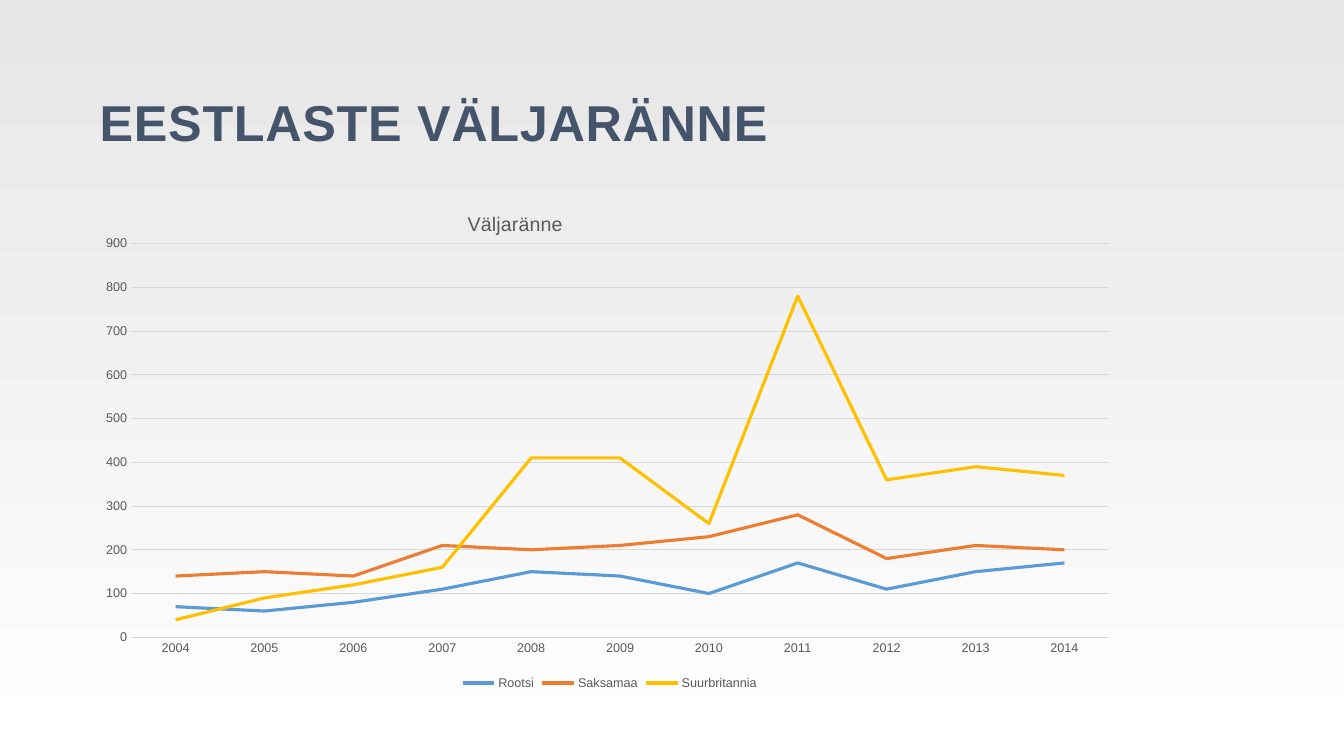
"""Builds a slide with a line chart of emigration from Estonia by destination."""
from dataclasses import dataclass

from lxml import etree
from pptx import Presentation
from pptx.chart.data import CategoryChartData
from pptx.dml.color import RGBColor
from pptx.enum.chart import XL_CHART_TYPE, XL_LEGEND_POSITION, XL_TICK_MARK
from pptx.enum.text import MSO_ANCHOR, PP_ALIGN
from pptx.oxml.ns import qn
from pptx.util import Pt

LINE_CHART = XL_CHART_TYPE.LINE
LEGEND_BOTTOM = XL_LEGEND_POSITION.BOTTOM
NO_TICK = XL_TICK_MARK.NONE
ANCHOR_BOTTOM = MSO_ANCHOR.BOTTOM
ALIGN_LEFT = PP_ALIGN.LEFT

HEADING = "EESTLASTE VÄLJARÄNNE"
CHART_TITLE = "Väljaränne"
YEARS = [str(year) for year in range(2004, 2015)]
DESTINATIONS = {
    "Rootsi": [70, 60, 80, 110, 150, 140, 100, 170, 110, 150, 170],
    "Saksamaa": [140, 150, 140, 210, 200, 210, 230, 280, 180, 210, 200],
    "Suurbritannia": [40, 90, 120, 160, 410, 410, 260, 780, 360, 390, 370],
}

SLIDE_SIZE = (960, 540)
HEADING_BOX = (64, 21.6, 832, 90)
CHART_BOX = (64, 126, 743, 370)
TITLE_LAYOUT = {"xMode": "edge", "yMode": "edge", "x": 0.36, "y": 0.06}
PLOT_LAYOUT = {"layoutTarget": "inner", "xMode": "edge", "yMode": "edge",
               "x": 0.04, "y": 0.13, "w": 0.94, "h": 0.76}


@dataclass(frozen=True)
class Theme:
    """Colours, font and type sizes of the slide."""
    font: str = "Arial"
    heading: str = "44546A"
    label: str = "595959"
    grid: str = "D9D9D9"
    background: tuple = ("E6E6E6", "FFFFFF")
    series: tuple = ("5B9BD5", "ED7D31", "FFC000")
    heading_size: float = 36
    chart_title_size: float = 14
    label_size: float = 9
    grid_width: float = 0.75
    series_width: float = 2.25


THEME = Theme()


def style_font(font, size, color, bold=False):
    """Apply the theme font with the given size, colour and weight."""
    formats = {"name": THEME.font, "size": Pt(size), "bold": bold}
    for name, value in formats.items():
        setattr(font, name, value)
    font.color.rgb = RGBColor.from_string(color)


def style_line(line, color, width):
    """Give a line a solid colour and a width in points."""
    line.color.rgb = RGBColor.from_string(color)
    line.width = Pt(width)


def set_layout(parent, index, values):
    """Place a chart part by fractions of the chart area."""
    for old in parent.findall(qn("c:layout")):
        parent.remove(old)
    layout = etree.Element(qn("c:layout"))
    manual = etree.SubElement(layout, qn("c:manualLayout"))
    for name, value in values.items():
        etree.SubElement(manual, qn(f"c:{name}")).set("val", str(value))
    parent.insert(index, layout)


def paint_background(page):
    """Fill the page with a vertical gradient."""
    fill = page.background.fill
    fill.gradient()
    fill.gradient_angle = 270
    for stop, color, position in zip(fill.gradient_stops, THEME.background, (0, 1)):
        stop.color.rgb = RGBColor.from_string(color)
        stop.position = position


def add_heading(page):
    """Fill and place the title placeholder."""
    box = page.shapes.title
    for name, value in zip(("left", "top", "width", "height"), HEADING_BOX):
        setattr(box, name, Pt(value))
    frame = box.text_frame
    frame.word_wrap = True
    frame.vertical_anchor = ANCHOR_BOTTOM
    para = frame.paragraphs[0]
    para.alignment = ALIGN_LEFT
    span = para.add_run()
    span.text = HEADING
    style_font(span.font, THEME.heading_size, THEME.heading, bold=True)
    span._r.get_or_add_rPr().set("spc", "50")


def add_emigration_chart(page):
    """Add the line chart with its title, axes and legend."""
    data = CategoryChartData()
    data.categories = YEARS
    for name, values in DESTINATIONS.items():
        data.add_series(name, values)
    frame = page.shapes.add_chart(LINE_CHART, *map(Pt, CHART_BOX), data)
    chart = frame.chart
    style_font(chart.font, THEME.label_size, THEME.label)

    title = chart.chart_title
    para = title.text_frame.paragraphs[0]
    span = para.add_run()
    span.text = CHART_TITLE
    style_font(span.font, THEME.chart_title_size, THEME.label)
    set_layout(title._element, 1, TITLE_LAYOUT)
    set_layout(chart._chartSpace.chart.plotArea, 0, PLOT_LAYOUT)

    years, people = chart.category_axis, chart.value_axis
    for axis in (years, people):
        axis.major_tick_mark = axis.minor_tick_mark = NO_TICK
        style_font(axis.tick_labels.font, THEME.label_size, THEME.label)
    style_line(years.format.line, THEME.grid, THEME.grid_width)
    people.format.line.fill.background()
    scale = {"minimum_scale": 0, "maximum_scale": 900, "major_unit": 100}
    for name, value in scale.items():
        setattr(people, name, value)
    style_line(people.major_gridlines.format.line, THEME.grid, THEME.grid_width)

    chart.has_legend = True
    legend = chart.legend
    legend.position = LEGEND_BOTTOM
    legend.include_in_layout = False
    style_font(legend.font, THEME.label_size, THEME.label)

    plot = chart.plots[0]
    plot.vary_by_categories = False
    for series, color in zip(plot.series, THEME.series):
        series.smooth = False
        style_line(series.format.line, color, THEME.series_width)


def main():
    """Build and save the deck."""
    deck = Presentation()
    deck.slide_width, deck.slide_height = map(Pt, SLIDE_SIZE)
    page = deck.slides.add_slide(deck.slide_layouts[5])
    paint_background(page)
    add_heading(page)
    add_emigration_chart(page)
    deck.save("out.pptx")


if __name__ == "__main__":
    main()
